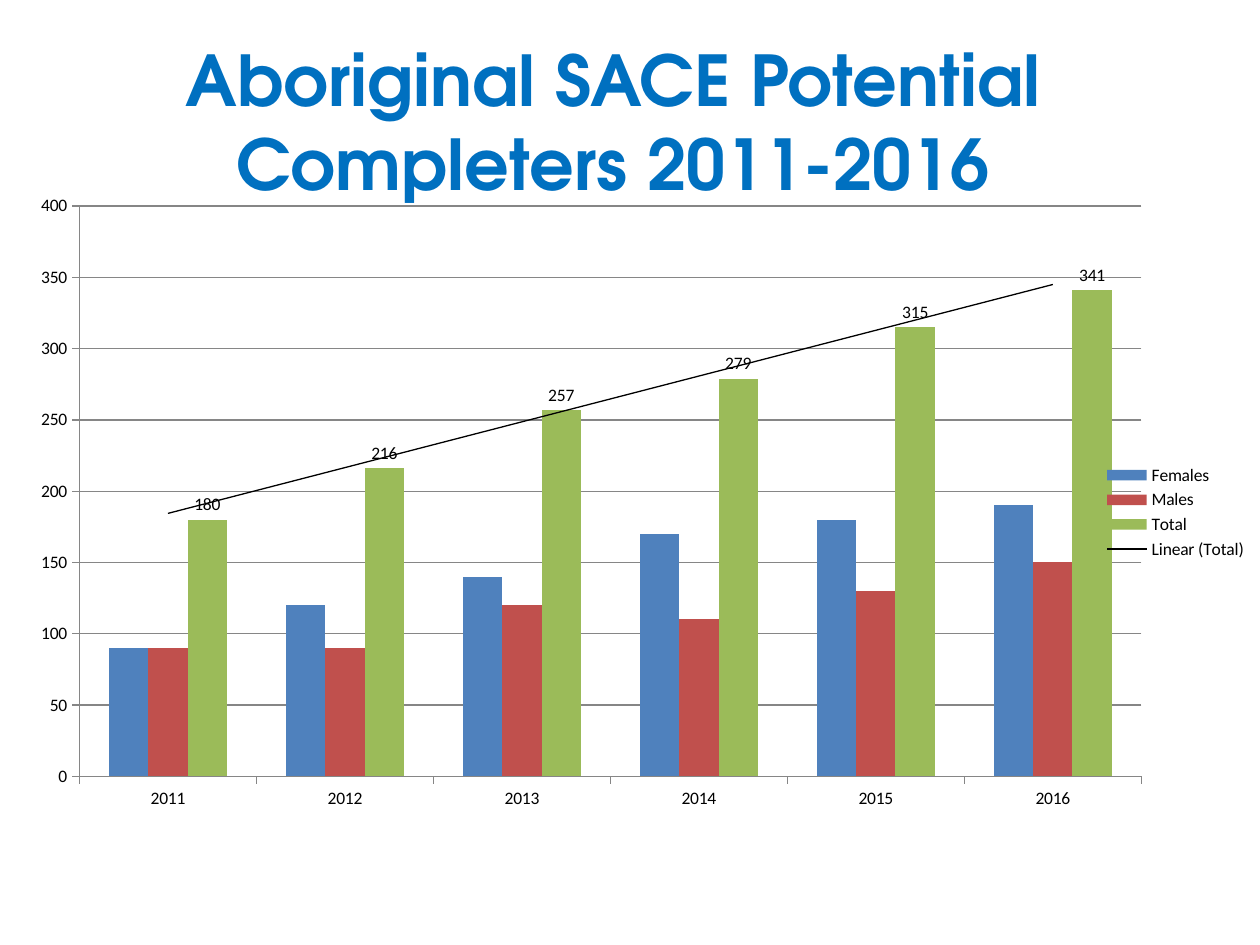
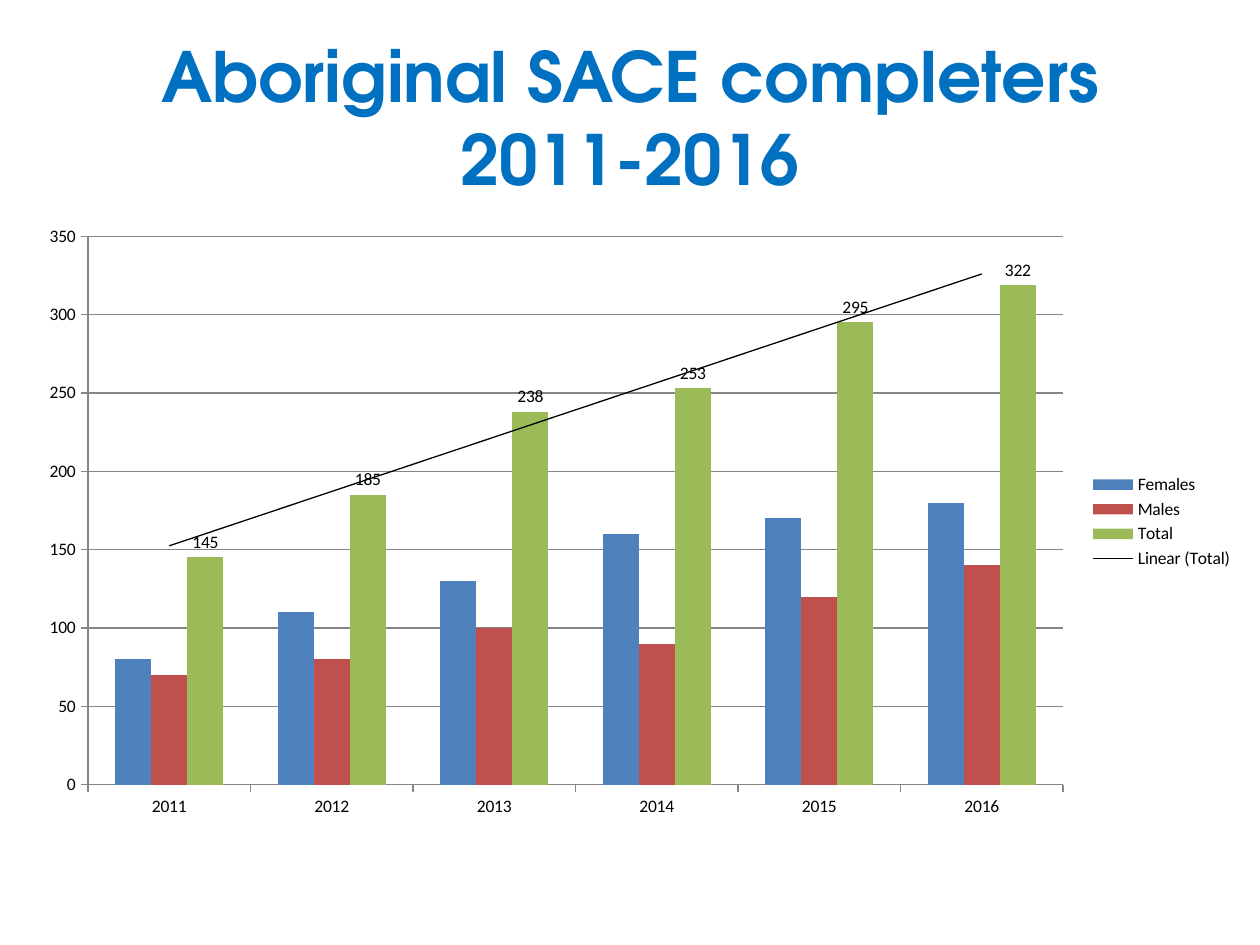
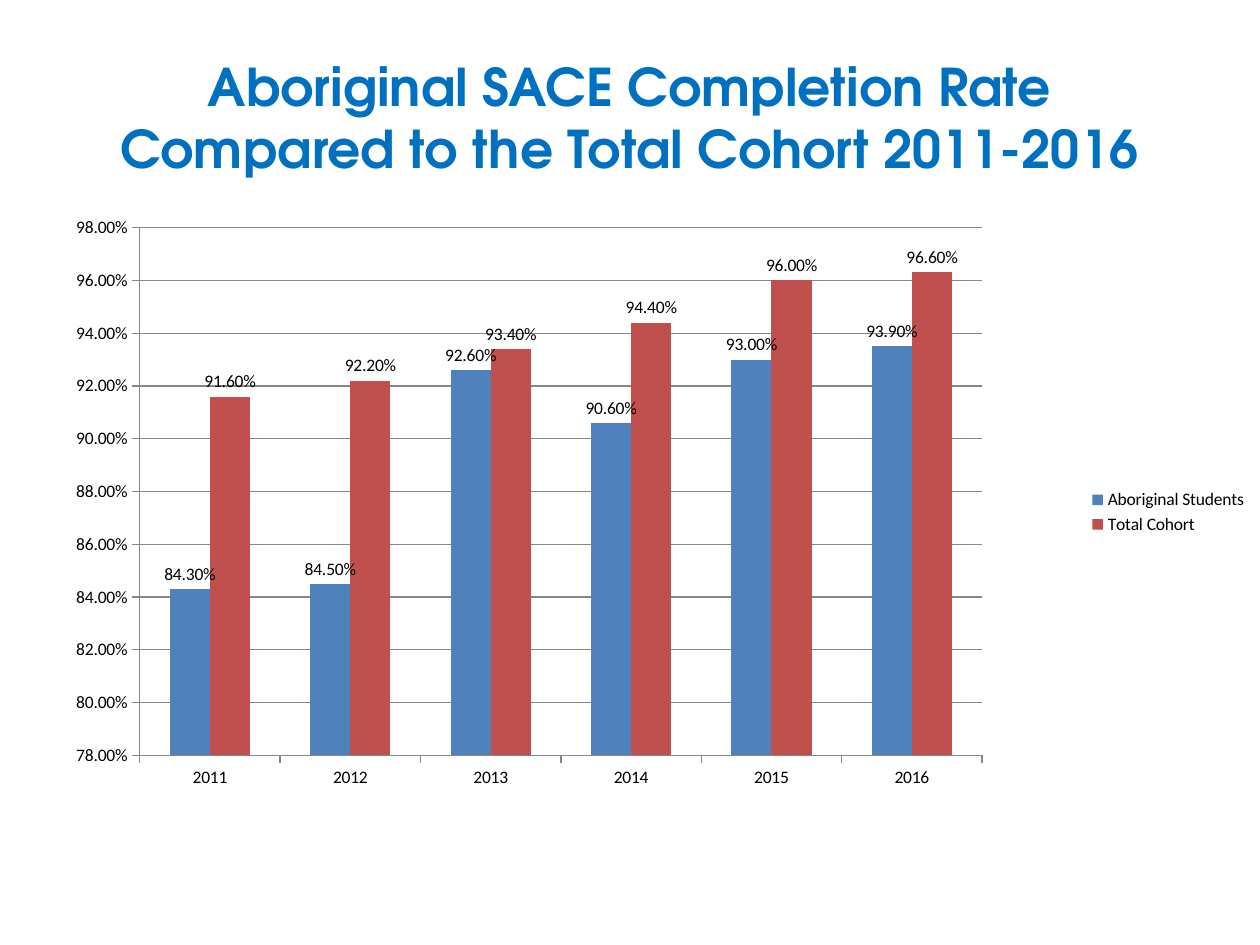
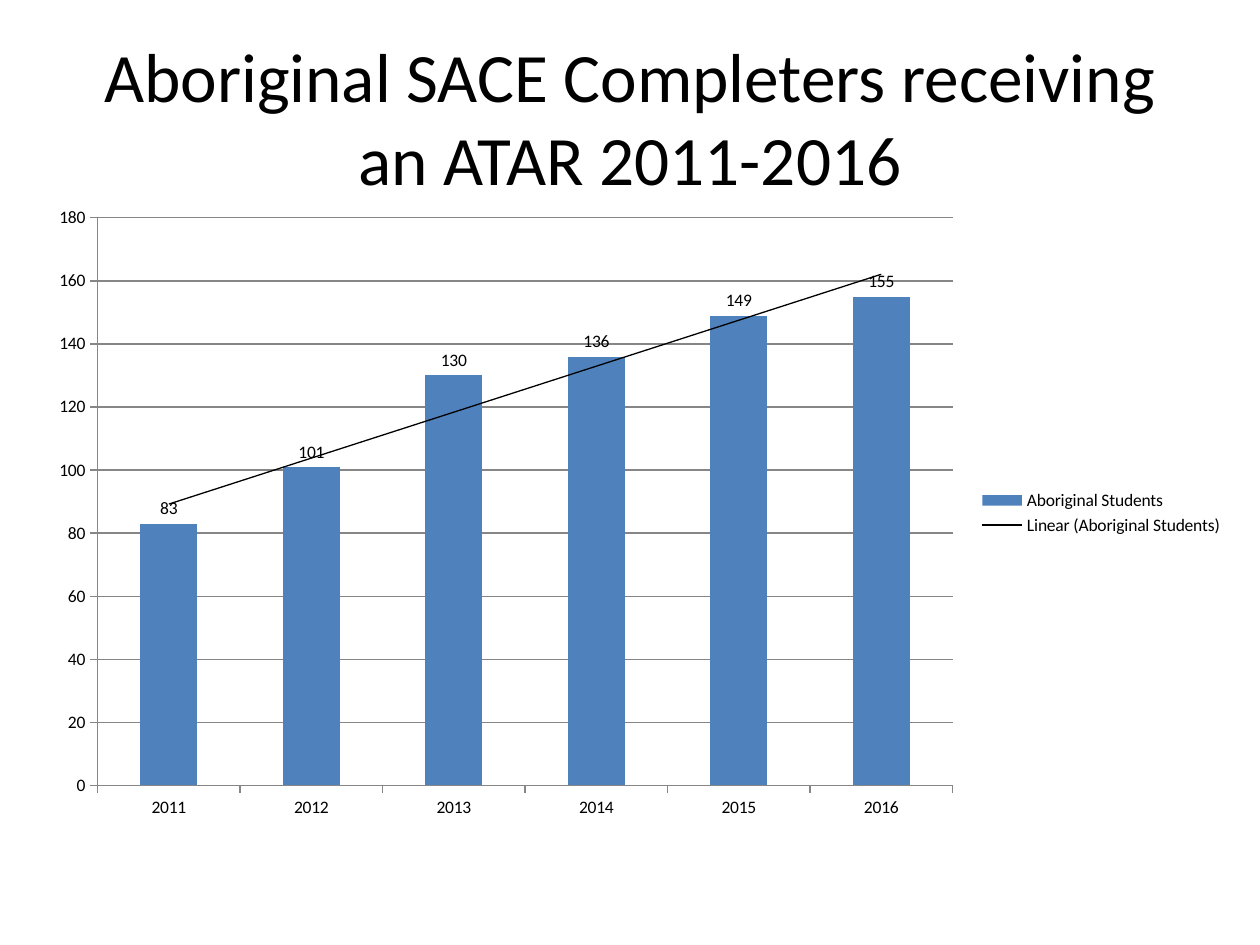
from dataclasses import dataclass

from pptx import Presentation
from pptx.chart.data import CategoryChartData
from pptx.dml.color import RGBColor
from pptx.enum.chart import XL_CHART_TYPE as ChartType
from pptx.enum.chart import XL_LABEL_POSITION as LabelPosition
from pptx.enum.chart import XL_LEGEND_POSITION as LegendPosition
from pptx.enum.chart import XL_TICK_MARK as TickMark
from pptx.enum.text import MSO_ANCHOR, MSO_AUTO_SIZE, PP_ALIGN
from pptx.oxml import parse_xml
from pptx.oxml.ns import nsdecls, qn
from pptx.util import Inches, Pt

TITLE_BLUE = RGBColor(0x00, 0x70, 0xC0)
BLACK = RGBColor(0x00, 0x00, 0x00)
BLUE = RGBColor(0x4F, 0x81, 0xBD)
RED = RGBColor(0xC0, 0x50, 0x4D)
GREEN = RGBColor(0x9B, 0xBB, 0x59)
AXIS_GREY = RGBColor(0x86, 0x86, 0x86)

BODY_FONT = "Calibri"
TITLE_FONT = "TeX Gyre Adventor"
CHART_SIZE = 10
YEARS = [str(year) for year in range(2011, 2017)]
TITLE_AREA = (0.5, 0.3, 9, 1.25)


@dataclass
class Bars:
    name: str
    values: list
    color: RGBColor
    labelled: bool = False
    trend: bool = False
    last_label: str = ""


def write_text(frame, text, font=BODY_FONT, size=CHART_SIZE, color=BLACK, bold=False):
    para = frame.paragraphs[0]
    para.alignment = PP_ALIGN.CENTER
    span = para.add_run()
    span.text = text
    span.font.name = font
    span.font.size = Pt(size)
    span.font.bold = bold
    span.font.color.rgb = color


def chart_xml(tag, content):
    return parse_xml(f"<c:{tag} {nsdecls('c', 'a')}>{content}</c:{tag}>")


class ChartDeck:
    def __init__(self):
        self.deck = Presentation()
        self.deck.slide_width = Inches(10)
        self.deck.slide_height = Inches(7.5)
        self.page = None

    def add_page(self, title, area=TITLE_AREA, **text_format):
        self.page = self.deck.slides.add_slide(self.deck.slide_layouts[5])
        box = self.page.shapes.title
        box.left, box.top, box.width, box.height = map(Inches, area)
        frame = box.text_frame
        frame.word_wrap = True
        frame.auto_size = MSO_AUTO_SIZE.NONE
        frame.vertical_anchor = MSO_ANCHOR.MIDDLE
        write_text(frame, title, **text_format)

    def add_bar_chart(self, area, groups, scale, number_format="General", plot_area=None):
        data = CategoryChartData(number_format=number_format)
        data.categories = YEARS
        for group in groups:
            data.add_series(group.name, group.values)
        chart = self.page.shapes.add_chart(
            ChartType.COLUMN_CLUSTERED, *map(Inches, area), data
        ).chart
        chart.has_title = False
        chart.font.name = BODY_FONT
        chart.font.size = Pt(CHART_SIZE)
        chart.font.color.rgb = BLACK
        plot = chart.plots[0]
        plot.gap_width = 150
        plot.overlap = 0
        plot.vary_by_categories = False
        self.style_axes(chart, scale, number_format)
        for series, group in zip(plot.series, groups):
            self.style_series(series, group)
        self.add_legend(chart, len(groups), any(group.trend for group in groups))
        if plot_area:
            self.place_plot(chart, plot_area)

    def style_axes(self, chart, scale, number_format):
        values = chart.value_axis
        values.minimum_scale, values.maximum_scale, values.major_unit = scale
        values.tick_labels.number_format = number_format
        values.tick_labels.number_format_is_linked = False
        values.has_major_gridlines = True
        for axis in (chart.category_axis, values):
            axis.major_tick_mark = TickMark.OUTSIDE
            axis.minor_tick_mark = TickMark.NONE
        for line in (
            chart.category_axis.format.line,
            values.format.line,
            values.major_gridlines.format.line,
        ):
            line.color.rgb = AXIS_GREY
            line.width = Pt(0.75)

    def style_series(self, series, group):
        series.format.fill.solid()
        series.format.fill.fore_color.rgb = group.color
        series.invert_if_negative = False
        if group.labelled:
            labels = series.data_labels
            labels.show_value = True
            labels.position = LabelPosition.OUTSIDE_END
        if group.last_label:
            label = series.points[len(YEARS) - 1].data_label
            write_text(label.text_frame, group.last_label)
            label.position = LabelPosition.OUTSIDE_END
        if group.trend:
            trend = chart_xml(
                "trendline",
                f'<c:spPr><a:ln w="{Pt(0.75)}"><a:solidFill><a:srgbClr val="{BLACK}"/>'
                '</a:solidFill></a:ln></c:spPr><c:trendlineType val="linear"/>'
                '<c:dispRSqr val="0"/><c:dispEq val="0"/>',
            )
            series._element.find(qn("c:cat")).addprevious(trend)

    def add_legend(self, chart, trend_index, has_trend):
        chart.has_legend = True
        legend = chart.legend
        legend.position = LegendPosition.RIGHT
        legend.include_in_layout = False
        if has_trend:
            entry = chart_xml("legendEntry", f'<c:idx val="{trend_index}"/><c:delete val="1"/>')
            legend._element.find(qn("c:legendPos")).addnext(entry)

    def place_plot(self, chart, plot_area):
        area = chart._chartSpace.chart.plotArea
        for layout in area.findall(qn("c:layout")):
            area.remove(layout)
        modes = '<c:layoutTarget val="inner"/><c:xMode val="edge"/><c:yMode val="edge"/>'
        sizes = "".join(f'<c:{key} val="{part}"/>' for key, part in zip("xywh", plot_area))
        area.insert(0, chart_xml("layout", f"<c:manualLayout>{modes}{sizes}</c:manualLayout>"))


def main():
    show = ChartDeck()
    blue_title = dict(font=TITLE_FONT, color=TITLE_BLUE, bold=True)

    show.add_page(
        "Aboriginal SACE Potential Completers 2011-2016",
        area=(0.53, 0.52, 8.67, 0.87), size=40, **blue_title,
    )
    show.add_bar_chart(
        (0.2, 1.55, 9.8, 5.03),
        [
            Bars("Females", [90, 120, 140, 170, 180, 190], BLUE),
            Bars("Males", [90, 90, 120, 110, 130, 150], RED),
            Bars("Total", [180, 216, 257, 279, 315, 341], GREEN, labelled=True, trend=True),
        ],
        scale=(0, 400, 50),
        plot_area=(0.044, 0.017, 0.86, 0.9),
    )

    show.add_page("Aboriginal SACE completers 2011-2016", size=39.6, **blue_title)
    show.add_bar_chart(
        (0.2, 1.7, 9.69, 4.88),
        [
            Bars("Females", [80, 110, 130, 160, 170, 180], BLUE),
            Bars("Males", [70, 80, 100, 90, 120, 140], RED),
            Bars("Total", [145, 185, 238, 253, 295, 319], GREEN,
                 labelled=True, trend=True, last_label="322"),
        ],
        scale=(0, 350, 50),
    )

    show.add_page(
        "Aboriginal SACE Completion Rate Compared to the Total Cohort 2011-2016",
        size=29.7, **blue_title,
    )
    show.add_bar_chart(
        (-0.35, 1.55, 10.35, 5.03),
        [
            Bars("Aboriginal Students", [0.843, 0.845, 0.926, 0.906, 0.93, 0.935], BLUE,
                 labelled=True, last_label="93.90%"),
            Bars("Total Cohort", [0.916, 0.922, 0.934, 0.944, 0.96, 0.963], RED,
                 labelled=True, last_label="96.60%"),
        ],
        scale=(0.78, 0.98, 0.02),
        number_format="0.00%",
        plot_area=(0.141, 0.051, 0.646, 0.833),
    )

    show.add_page("Aboriginal SACE Completers receiving an ATAR 2011-2016", size=39.6)
    show.add_bar_chart(
        (0.28, 1.55, 9.53, 5.04),
        [Bars("Aboriginal Students", [83, 101, 130, 136, 149, 155], BLUE,
              labelled=True, trend=True)],
        scale=(0, 180, 20),
    )

    show.deck.save("out.pptx")


if __name__ == "__main__":
    main()
